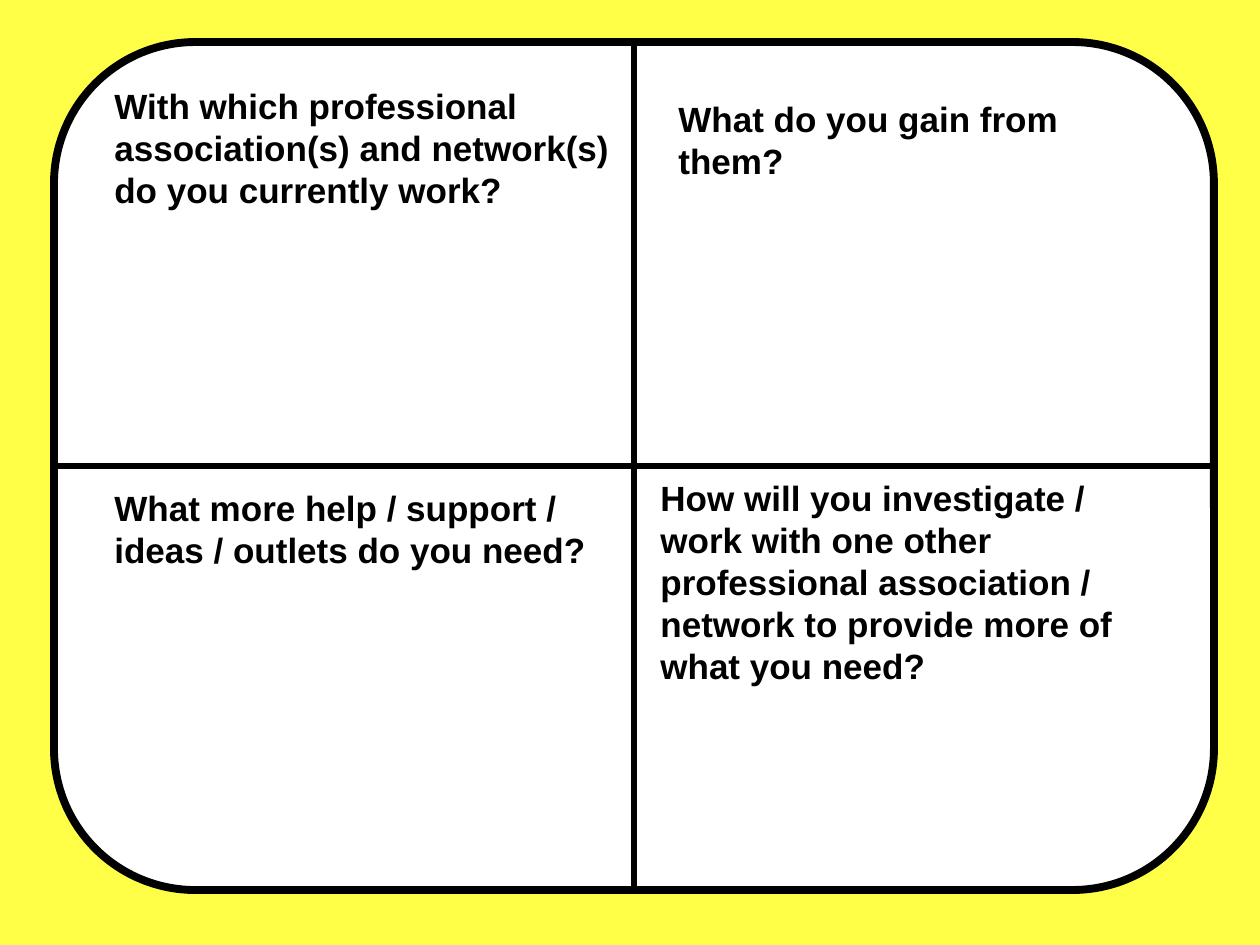
from dataclasses import dataclass

from lxml.etree import SubElement
from pptx import Presentation
from pptx.dml.color import RGBColor
from pptx.enum.shapes import MSO_CONNECTOR, MSO_SHAPE
from pptx.enum.text import MSO_ANCHOR, MSO_AUTO_SIZE, PP_ALIGN
from pptx.oxml.ns import qn
from pptx.util import Inches, Pt

PIXELS_PER_INCH = 126
TOP, LEFT, BOTTOM, RIGHT = range(4)


@dataclass(frozen=True)
class Theme:
    background: RGBColor = RGBColor(0xFF, 0xFF, 0x47)
    panel: RGBColor = RGBColor(0xFF, 0xFF, 0xFF)
    ink: RGBColor = RGBColor(0x00, 0x00, 0x00)
    font: str = "Arial"
    text_size: float = 20
    frame_width: float = 4.5
    divider_width: float = 3


def px(length):
    return Inches(length / PIXELS_PER_INCH)


class SlideBuilder:
    def __init__(self, slide, theme):
        self.slide = slide
        self.theme = theme

    def background(self):
        fill = self.slide.background.fill
        fill.solid()
        fill.fore_color.rgb = self.theme.background

    def outline(self, line, width):
        line.color.rgb = self.theme.ink
        line.width = Pt(width)

    def frame(self, left, top, width, height):
        shape = self.slide.shapes.add_shape(
            MSO_SHAPE.ROUNDED_RECTANGLE, px(left), px(top), px(width), px(height))
        shape.shadow.inherit = False
        shape.fill.solid()
        shape.fill.fore_color.rgb = self.theme.panel
        self.outline(shape.line, self.theme.frame_width)
        return shape

    def divider(self, frame, start_side, end_side):
        """Draw a line joining the middles of two sides of the frame."""
        connector = self.slide.shapes.add_connector(MSO_CONNECTOR.STRAIGHT, 0, 0, 0, 0)
        connector.begin_connect(frame, start_side)
        connector.end_connect(frame, end_side)
        self.outline(connector.line, self.theme.divider_width)
        SubElement(connector._element.spPr, qn("a:effectLst"))

    def question(self, text, left, top, width, height):
        box = self.slide.shapes.add_textbox(px(left), px(top), px(width), px(height))
        text_frame = box.text_frame
        text_frame.word_wrap = True
        text_frame.auto_size = MSO_AUTO_SIZE.SHAPE_TO_FIT_TEXT
        text_frame.vertical_anchor = MSO_ANCHOR.TOP
        paragraph = text_frame.paragraphs[0]
        paragraph.alignment = PP_ALIGN.LEFT
        run = paragraph.add_run()
        run.text = text
        run.font.name = self.theme.font
        run.font.size = Pt(self.theme.text_size)
        run.font.bold = True
        run.font.color.rgb = self.theme.ink


QUESTIONS = [
    ("With which professional association(s) and network(s) do you currently work?",
     102, 78, 532, 140),
    ("What do you gain from them?", 666, 91, 474, 89),
    ("What more help / support / ideas / outlets do you need?", 102, 480, 500, 89),
    ("How will you investigate / work with one other professional association / "
     "network to provide more of what you need?", 648, 470, 534, 224),
]


def main():
    presentation = Presentation()
    presentation.slide_width = px(1260)
    presentation.slide_height = px(945)
    blank_layout = presentation.slide_layouts[6]
    builder = SlideBuilder(presentation.slides.add_slide(blank_layout), Theme())

    builder.background()
    frame = builder.frame(54, 42, 1160, 848)
    builder.divider(frame, TOP, BOTTOM)
    builder.divider(frame, LEFT, RIGHT)
    for text, left, top, width, height in QUESTIONS:
        builder.question(text, left, top, width, height)

    presentation.save("out.pptx")


if __name__ == "__main__":
    main()
